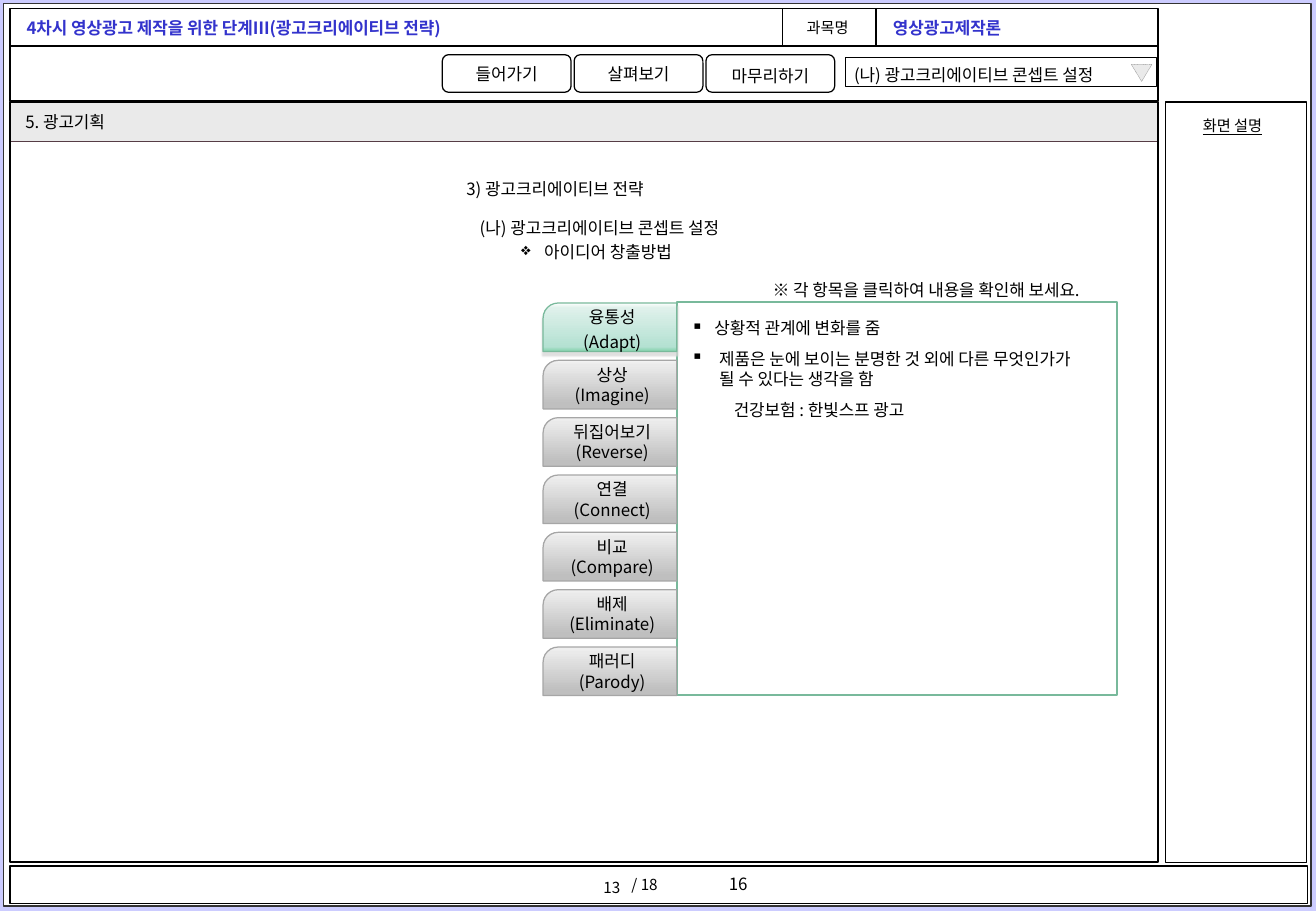
from copy import deepcopy
from lxml.etree import SubElement
from pptx import Presentation
from pptx.dml.color import RGBColor
from pptx.enum.dml import MSO_LINE
from pptx.enum.shapes import MSO_SHAPE as Shape
from pptx.enum.text import MSO_ANCHOR as Anchor, PP_ALIGN as Align
from pptx.oxml.ns import qn
from pptx.util import Inches, Pt

FONT = "Noto Sans CJK KR"
BLACK, WHITE, BLUE, GREEN = "000000", "FFFFFF", "3333CC", "78B99B"
CELL = Inches(0.1)
COLUMNS, ROWS = 108.3, 75
hex_color = RGBColor.from_string

deck = Presentation()
deck.slide_width, deck.slide_height = int(COLUMNS * CELL), int(ROWS * CELL)
page = deck.slides.add_slide(deck.slide_layouts[6])


def draw(kind, place, fill=None, line=None, weight=1.0):
    shape = page.shapes.add_shape(kind, *[int(cells * CELL) for cells in place])
    shape.shadow.inherit = False
    if fill:
        shape.fill.solid()
        shape.fill.fore_color.rgb = hex_color(fill)
    else:
        shape.fill.background()
    if line:
        shape.line.color.rgb = hex_color(line)
        shape.line.width = Pt(weight)
    else:
        shape.line.fill.background()
    return shape


def write(box, text, size=10, color=BLACK, bold=False, underline=False, align=Align.LEFT,
          anchor=Anchor.TOP, spacing=1.0, before=0, indent=0, bullet=None):
    frame = box.text_frame
    frame.word_wrap = True
    frame.vertical_anchor = anchor
    para = frame.add_paragraph() if frame.text else frame.paragraphs[0]
    para.text = text
    para.alignment = align
    para.line_spacing = spacing
    para.space_before = Pt(before)
    properties = para._p.get_or_add_pPr()
    properties.set("marL", str(int(indent * CELL)))
    if bullet:
        properties.set("indent", str(int(-indent * CELL)))
        SubElement(properties, qn("a:buChar"), char=bullet)
    for line_break in para._p.findall(qn("a:br")):
        SubElement(line_break, qn("a:rPr"), sz=str(size * 100))
    for span in para.runs:
        span.font.name = FONT
        span.font.size = Pt(size)
        span.font.bold = bold
        span.font.underline = underline
        span.font.color.rgb = hex_color(color)
        SubElement(span._r.get_or_add_rPr(), qn("a:ea"), typeface=FONT)


for place, fill, line, weight in [
    ((0, 0, COLUMNS, ROWS), "CCCCFF", None, 0),
    ((0.3, 0.3, 107.6, 74.3), WHITE, "333333", 0.75),
    ((0.8, 8.4, 94.5, 3.2), "EAEAEA", "563C45", 0.25),
    ((0.8, 71.3, 106.8, 3.1), None, BLACK, 1),
    ((0.8, 8.4, 94.5, 62.6), None, BLACK, 1),
    ((95.9, 8.4, 11.6, 62.6), None, BLACK, 0.75),
    ((0.8, 0.7, 94.5, 3.1), None, BLACK, 1),
    ((64.4, 0.7, 7.7, 3.1), None, BLACK, 1),
    ((0.8, 3.8, 94.5, 4.5), None, BLACK, 1),
    ((69.6, 4.7, 25.6, 2.4), WHITE, BLACK, 0.25),
    ((55.7, 24.9, 36.2, 32.3), WHITE, GREEN, 1.2),
]:
    draw(Shape.RECTANGLE, place, fill, line, weight)

arrow = draw(Shape.ISOSCELES_TRIANGLE, (93.1, 5.3, 1.7, 1.4), "EAEAEA", "969696", 0.25)
arrow.rotation = 180
arrow.line.dash_style = MSO_LINE.ROUND_DOT

for index, (label, spacing) in enumerate([("들어가기", 1), ("살펴보기", 1), ("마무리하기", 1.2)]):
    button = draw(Shape.ROUNDED_RECTANGLE, (36.4 + index * 10.85, 4.5, 10.6, 3.1), WHITE, BLACK, 0.75)
    write(button, label, align=Align.CENTER, anchor=Anchor.MIDDLE, spacing=spacing)

green_stops = ["82D2AA", "B4E1D2", "DFF1EB", "FFFFFF"]
gray_stops = ["BFBFBF", "BFBFBF", "EAEAEA", "F2F2F2"]
methods = [("융통성", "(Adapt)"), ("상상", "(Imagine)"), ("뒤집어보기", "(Reverse)"),
           ("연결", "(Connect)"), ("비교", "(Compare)"), ("배제", "(Eliminate)"),
           ("패러디", "(Parody)")]
for index, names in enumerate(methods):
    active = index == 0
    tab = draw(Shape.ROUND_1_RECTANGLE, (44.7, 24.95 + index * 4.72, 11, 4),
               WHITE, GREEN if active else "A6A6A6", 0.75)
    tab.adjustments[0] = 0.31
    shape_properties = tab._element.spPr
    shape_properties.get_or_add_xfrm().set("flipH", "1")
    tab.fill.gradient()
    tab.fill.gradient_angle = 90
    stop_list = shape_properties.find(".//" + qn("a:gsLst"))
    stop_list.extend([deepcopy(stop) for stop in stop_list])
    colors = green_stops if active else gray_stops
    for stop, position, color in zip(tab.fill.gradient_stops, [0, 0.1, 0.9, 1], colors):
        stop.position = position
        stop.color.rgb = hex_color(color)
    if active:
        shadow = SubElement(shape_properties.find(qn("a:effectLst")), qn("a:outerShdw"),
                            blurRad=str(Pt(1)), dist=str(Pt(2)), dir="5400000")
        shade = SubElement(shadow, qn("a:srgbClr"), val="D9D9D9")
        SubElement(shade, qn("a:alpha"), val="80000")
    for name in names:
        write(tab, name, align=Align.CENTER, anchor=Anchor.MIDDLE, spacing=1.2 if active else 1)

ideas = [
    ("상황적 관계에 변화를 줌", dict(indent=1.9, bullet="▪")),
    ("제품은 눈에 보이는 분명한 것 외에 다른 무엇인가가\v될 수 있다는 생각을 함",
     dict(indent=2.3, bullet="▪", before=6)),
    ("건강보험 : 한빛스프 광고", dict(indent=3.5, before=6)),
]
for place, paragraphs in [
    ((98, 9.1, 8, 2.5), [("화면 설명", dict(size=9, underline=True))]),
    ((1.2, 1, 51.7, 2.7),
     [("4차시 영상광고 제작을 위한 단계Ⅲ(광고크리에이티브 전략)", dict(color=BLUE, bold=True))]),
    ((65.4, 1, 7, 2.5), [("과목명", dict(size=9))]),
    ((72.5, 0.6, 22.6, 2.8), [("영상광고제작론", dict(color=BLUE, bold=True, spacing=1.2))]),
    ((69.3, 4.5, 25.7, 3.1), [("(나) 광고크리에이티브 콘셉트 설정", dict(spacing=1.2))]),
    ((1.1, 8.4, 53.1, 2.9), [("5. 광고기획", dict(spacing=1.2))]),
    ((37.4, 13.9, 20, 3), [("3) 광고크리에이티브 전략", dict(spacing=1.2))]),
    ((37.9, 17.1, 29.3, 2.9),
     [("(나) 광고크리에이티브 콘셉트 설정", dict(spacing=1.2, indent=0.6, anchor=Anchor.MIDDLE))]),
    ((41.9, 19.4, 17, 2.7), [("아이디어 창출방법", dict(indent=1.9, bullet="❖"))]),
    ((62.6, 22.2, 32.3, 3), [("※ 각 항목을 클릭하여 내용을 확인해 보세요.", dict(spacing=1.2))]),
    ((55.9, 25.7, 45.1, 9.4), ideas),
    ((48.4, 71.5, 3.9, 2.8), [("13", dict(size=9, align=Align.CENTER, spacing=1.2))]),
    ((50.7, 71.6, 4.4, 2.5), [("/ 18", dict(size=9, align=Align.RIGHT))]),
    ((59, 71.4, 4.1, 2.7), [("16", {})]),
]:
    box = page.shapes.add_textbox(*[int(cells * CELL) for cells in place])
    for text, style in paragraphs:
        write(box, text, **style)

deck.save("out.pptx")
